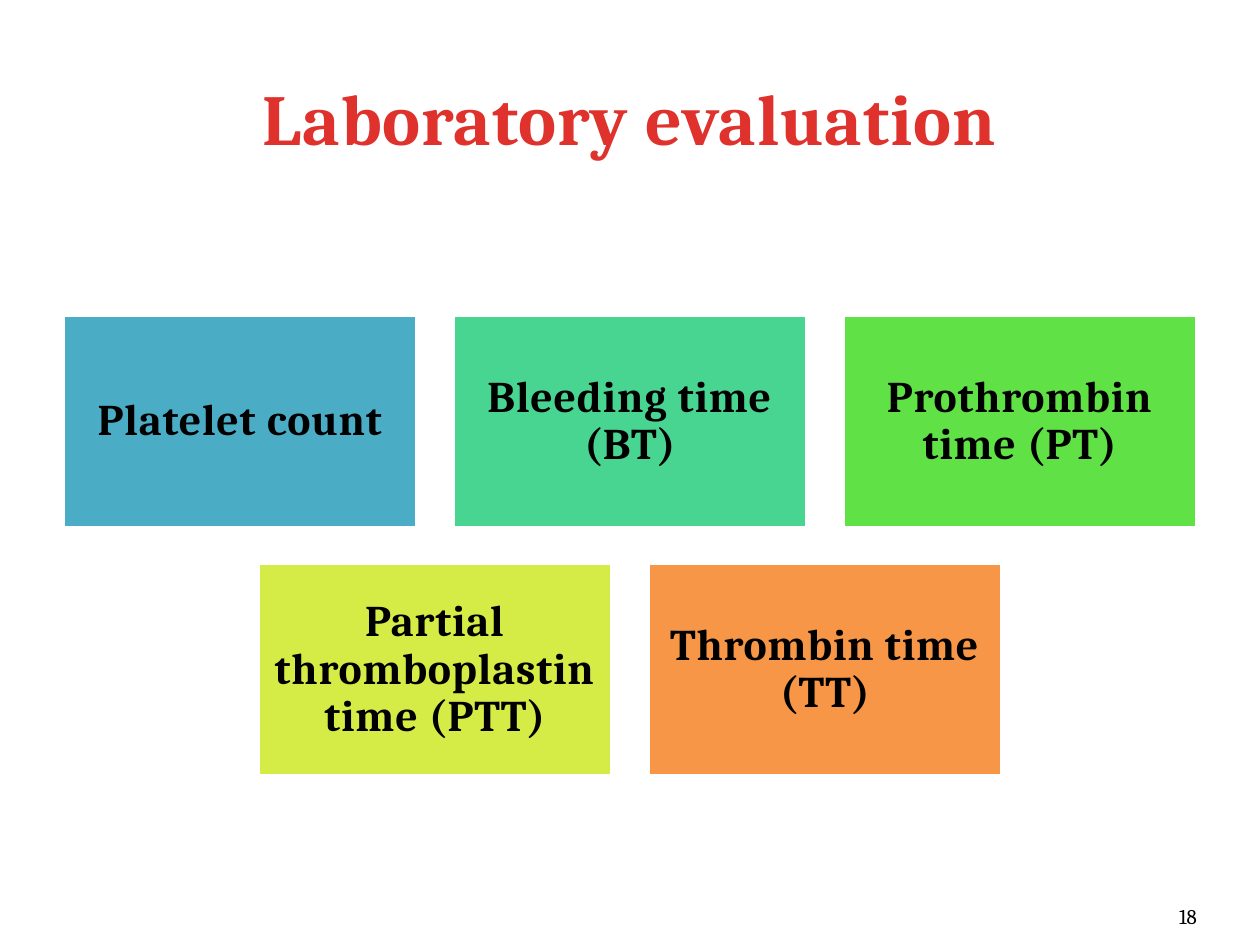
from dataclasses import dataclass

from pptx import Presentation
from pptx.dml.color import RGBColor
from pptx.enum.shapes import MSO_SHAPE
from pptx.enum.text import MSO_ANCHOR, MSO_AUTO_SIZE, PP_ALIGN
from pptx.util import Cm, Pt

RECTANGLE = MSO_SHAPE.RECTANGLE
CENTER, RIGHT = PP_ALIGN.CENTER, PP_ALIGN.RIGHT
MIDDLE, BOTTOM = MSO_ANCHOR.MIDDLE, MSO_ANCHOR.BOTTOM
NO_AUTOFIT = MSO_AUTO_SIZE.NONE


@dataclass(frozen=True)
class Theme:
    font: str = "Cambria"
    title_color: str = "E0322D"
    text_color: str = "000000"
    paper: str = "FFFFFF"
    title_size: float = 41
    tile_size: float = 25
    number_size: float = 12
    letter_spacing: float = 0.5


THEME = Theme()

TESTS = [
    ("Platelet count", "4BACC6"),
    ("Bleeding time (BT)", "48D491"),
    ("Prothrombin time (PT)", "60E146"),
    ("Partial thromboplastin time (PTT)", "D5EC46"),
    ("Thrombin time (TT)", "F79646"),
]


def write(shape, text, size, color, align, anchor, bold=False, spacing=0):
    """Fill a shape with one styled paragraph, spacing its letters in points."""
    frame = shape.text_frame
    frame.word_wrap = True
    frame.auto_size = NO_AUTOFIT
    frame.vertical_anchor = anchor
    para = frame.paragraphs[0]
    para.alignment = align
    span = para.add_run()
    span.text = text
    if spacing:
        span._r.get_or_add_rPr().set("spc", str(round(spacing * 100)))
    para.font.name = THEME.font
    para.font.size = Pt(size)
    para.font.bold = bold
    para.font.color.rgb = RGBColor.from_string(color)
    return para


def place_title(page, text, left, top, width, height):
    title = page.shapes.title
    title.left, title.top = Cm(left), Cm(top)
    title.width, title.height = Cm(width), Cm(height)
    title.fill.solid()
    title.fill.fore_color.rgb = RGBColor.from_string(THEME.paper)
    write(title, text, THEME.title_size, THEME.title_color, CENTER, MIDDLE,
          bold=True, spacing=THEME.letter_spacing)


def add_tile(page, text, color, left, top, width, height):
    tile = page.shapes.add_shape(RECTANGLE, Cm(left), Cm(top), Cm(width), Cm(height))
    tile.shadow.inherit = False
    tile.fill.solid()
    tile.fill.fore_color.rgb = RGBColor.from_string(color)
    tile.line.color.rgb = RGBColor.from_string(THEME.paper)
    tile.line.width = Pt(2)
    frame = tile.text_frame
    frame.margin_left = frame.margin_right = Cm(0.25)
    frame.margin_top = frame.margin_bottom = Cm(0.25)
    para = write(tile, text, THEME.tile_size, THEME.text_color, CENTER, MIDDLE,
                 bold=True, spacing=THEME.letter_spacing)
    para.line_spacing = 0.9


def add_tile_grid(page, tests, left, top, width, columns=3, gap=0.72, ratio=0.6):
    """Lay tiles out in rows, centring a row that is not full."""
    tile_width = (width - (columns - 1) * gap) / columns
    tile_height = tile_width * ratio
    for start in range(0, len(tests), columns):
        row = tests[start:start + columns]
        row_width = len(row) * (tile_width + gap) - gap
        row_left = left + (width - row_width) / 2
        row_top = top + start // columns * (tile_height + gap)
        for column, (text, color) in enumerate(row):
            add_tile(page, text, color, row_left + column * (tile_width + gap),
                     row_top, tile_width, tile_height)


def add_page_number(page, number, left, top, width, height):
    box = page.shapes.add_textbox(Cm(left), Cm(top), Cm(width), Cm(height))
    box.text_frame.margin_left = box.text_frame.margin_right = 0
    write(box, number, THEME.number_size, THEME.text_color, RIGHT, BOTTOM)


def main():
    deck = Presentation()
    deck.slide_width, deck.slide_height = Cm(25.4), Cm(19.05)
    title_only = deck.slide_layouts[5]
    page = deck.slides.add_slide(title_only)
    place_title(page, "Laboratory evaluation", 1.27, 0.76, 22.86, 3.18)
    add_tile_grid(page, TESTS, 1.27, 6.36, 22.86)
    add_page_number(page, "18", 22.02, 17.83, 2.11, 1.02)
    deck.save("out.pptx")


if __name__ == "__main__":
    main()
